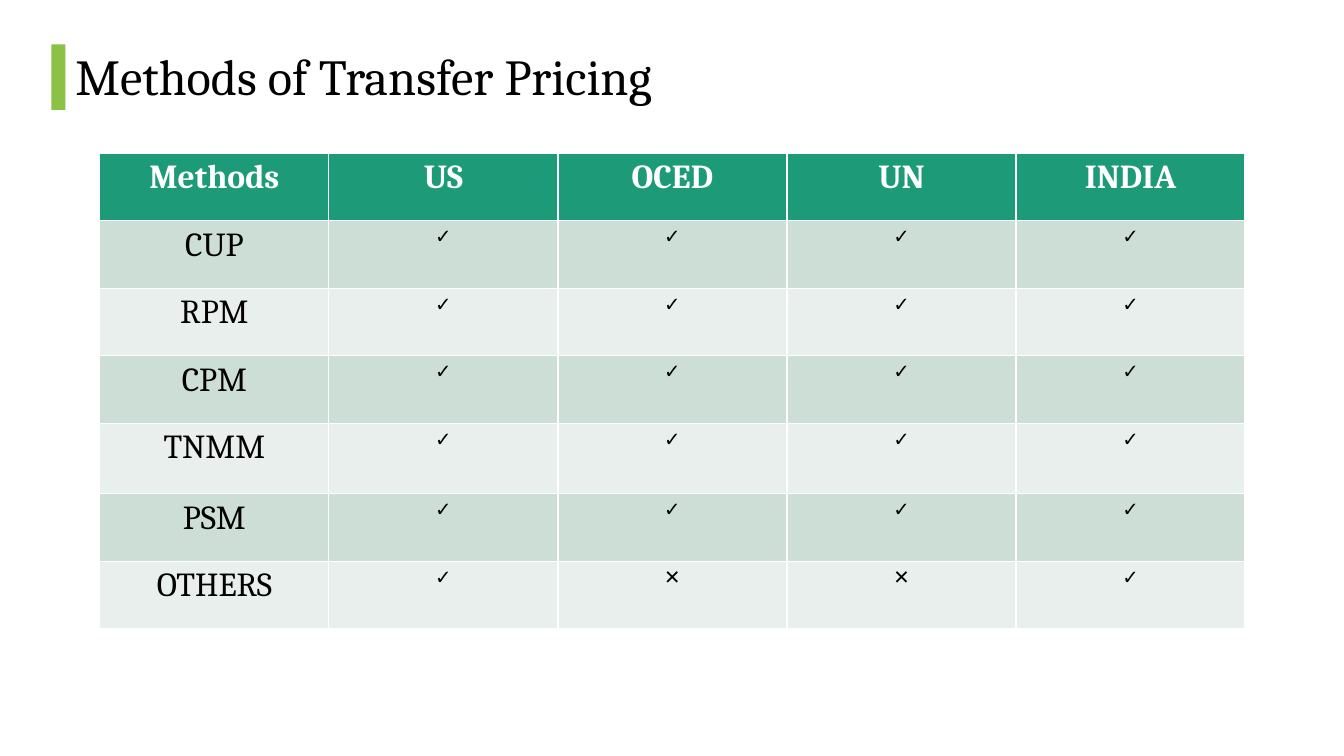
import dataclasses

import pptx
import pptx.dml.color
import pptx.enum.shapes
import pptx.enum.text
import pptx.util


@dataclasses.dataclass(frozen=True)
class Theme:
    accent: str = "8BC145"
    header: str = "1D9A78"
    bands: tuple = ("CDDED6", "E8EFEC")
    ink: str = "000000"
    paper: str = "FFFFFF"
    text_font: str = "Cambria"
    mark_font: str = "Arial"
    title_size: int = 36
    label_size: int = 24
    mark_size: int = 14


THEME = Theme()
SLIDE_WIDTH, SLIDE_HEIGHT = 13.33, 7.5
YES, NO = "✓", "✕"
COUNTRIES = ["US", "OCED", "UN", "INDIA"]
ADOPTION = {
    "CUP": [YES] * 4,
    "RPM": [YES] * 4,
    "CPM": [YES] * 4,
    "TNMM": [YES] * 4,
    "PSM": [YES] * 4,
    "OTHERS": [YES, NO, NO, YES],
}
ROW_HEIGHT = 0.67
ROW_HEIGHTS = {"TNMM": 0.7}


def inches(*lengths):
    return [pptx.util.Inches(length) for length in lengths]


def paint(fill, color):
    fill.solid()
    fill.fore_color.rgb = pptx.dml.color.RGBColor.from_string(color)


def write(frame, text, size, font, color, bold=False):
    """Fill a text frame with one styled paragraph and return it."""
    paragraph = frame.paragraphs[0]
    paragraph.text = text
    for run in paragraph.runs:
        run.font.size = pptx.util.Pt(size)
        run.font.name = font
        run.font.bold = bold
        run.font.color.rgb = pptx.dml.color.RGBColor.from_string(color)
    return paragraph


def add_heading(slide, left, top, width, height, text):
    """Title at the bottom of the box, after an accent bar at its left edge."""
    bar_width, bar_height = 0.14, 0.65
    heading = slide.shapes.add_textbox(
        *inches(left + bar_width, top, width - bar_width, height))
    frame = heading.text_frame
    frame.word_wrap = True
    frame.vertical_anchor = pptx.enum.text.MSO_ANCHOR.BOTTOM
    line = write(frame, text, THEME.title_size, THEME.text_font, THEME.ink)
    line.line_spacing = 0.9

    bar = slide.shapes.add_shape(
        pptx.enum.shapes.MSO_SHAPE.RECTANGLE,
        *inches(left, top + height - bar_height - 0.01, bar_width, bar_height))
    bar.shadow.inherit = False
    paint(bar.fill, THEME.accent)
    bar.line.fill.background()


def add_methods_table(slide, left, top, width):
    """One row per method, one column per country, with banded rows."""
    rows = [["Methods", *COUNTRIES]]
    rows += [[method, *marks] for method, marks in ADOPTION.items()]
    heights = [ROW_HEIGHTS.get(row[0], ROW_HEIGHT) for row in rows]
    columns = len(rows[0])
    table = slide.shapes.add_table(
        len(rows), columns, *inches(left, top, width, sum(heights))).table
    for column in table.columns:
        column.width = pptx.util.Inches(width / columns)

    for r, values in enumerate(rows):
        table.rows[r].height = pptx.util.Inches(heights[r])
        is_header = r == 0
        band = THEME.header if is_header else THEME.bands[(r - 1) % 2]
        color = THEME.paper if is_header else THEME.ink
        for c, value in enumerate(values):
            cell = table.cell(r, c)
            paint(cell.fill, band)
            if is_header or c == 0:
                size, font = THEME.label_size, THEME.text_font
            else:
                size, font = THEME.mark_size, THEME.mark_font
            entry = write(cell.text_frame, value, size, font, color, is_header)
            entry.alignment = pptx.enum.text.PP_ALIGN.CENTER


def main():
    deck = pptx.Presentation()
    deck.slide_width, deck.slide_height = inches(SLIDE_WIDTH, SLIDE_HEIGHT)
    slide = deck.slides.add_slide(deck.slide_layouts[6])
    paint(slide.background.fill, THEME.paper)
    add_heading(slide, 0.51, 0.25, 7, 0.85, "Methods of Transfer Pricing")
    add_methods_table(slide, 0.99, 1.52, 11.36)
    deck.save("out.pptx")


if __name__ == "__main__":
    main()
